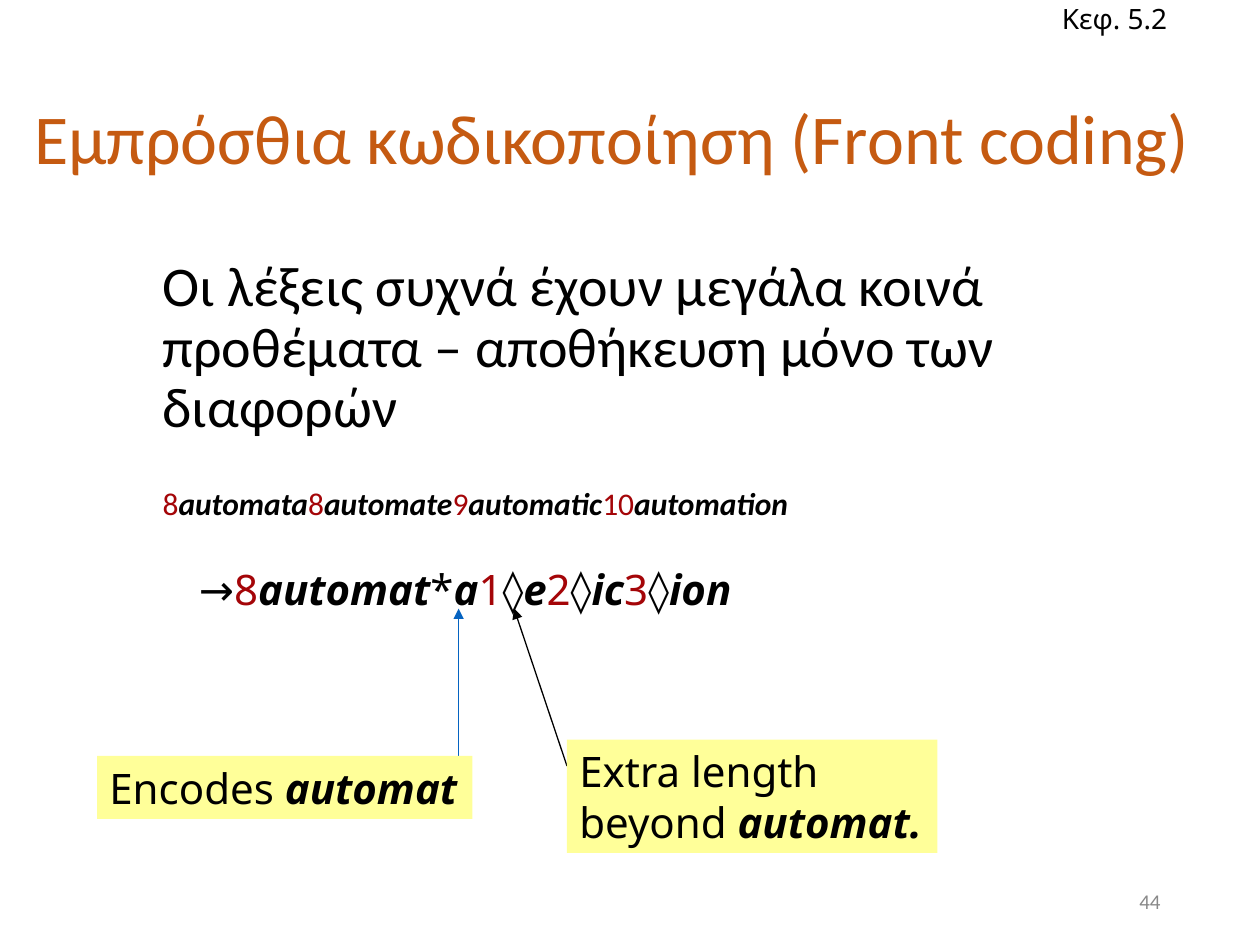
import dataclasses
import typing

import pptx
import pptx.dml.color
import pptx.enum.shapes
import pptx.enum.text
import pptx.oxml
import pptx.oxml.ns
import pptx.util

Inches = pptx.util.Inches
Color = pptx.dml.color.RGBColor
Align = pptx.enum.text.PP_ALIGN
Anchor = pptx.enum.text.MSO_ANCHOR
AutoSize = pptx.enum.text.MSO_AUTO_SIZE


@dataclasses.dataclass(frozen=True)
class Theme:
    heading_font: str = "Calibri"
    example_font: str = "Noto Sans"
    title: Color = Color(0xC5, 0x5A, 0x11)
    ink: Color = Color(0, 0, 0)
    number: Color = Color(0xA4, 0x05, 0x08)
    muted: Color = Color(0x89, 0x89, 0x89)
    note: Color = Color(0xFF, 0xFF, 0x99)
    blue: Color = Color(0x05, 0x63, 0xC1)
    title_size: int = 40
    body_size: int = 32
    example_size: int = 24
    words_size: int = 18
    section_size: int = 16
    page_number_size: int = 12


class Span(typing.NamedTuple):
    text: str
    strong: bool = False
    number: bool = False


class Area(typing.NamedTuple):
    left: float
    top: float
    width: float
    height: float


class Note(typing.NamedTuple):
    area: Area
    lines: list[list[Span]]


class Arrow(typing.NamedTuple):
    start: tuple[float, float]
    end: tuple[float, float]
    color: Color
    width: float


THEME = Theme()


def plain(text: str) -> Span:
    return Span(text)


def term(text: str) -> Span:
    return Span(text, strong=True)


def count(text: str) -> Span:
    return Span(text, number=True)


def write(para, text: str | list[Span], *, size: int, font: str = THEME.example_font,
          color: Color = THEME.ink, align=Align.LEFT) -> None:
    para.alignment = align
    for part in [plain(text)] if isinstance(text, str) else text:
        span = para.add_run()
        span.text = part.text
        span.font.name = font
        span.font.size = pptx.util.Pt(size)
        span.font.bold = span.font.italic = part.strong
        span.font.color.rgb = THEME.number if part.number else color


def place(shape, area: Area) -> None:
    shape.left, shape.top, shape.width, shape.height = map(Inches, area)


def add_label(page, area: Area, text: str | list[Span], *, wrap: bool = False,
              anchor=Anchor.TOP, **style) -> None:
    box = page.shapes.add_textbox(*map(Inches, area))
    frame = box.text_frame
    frame.word_wrap = wrap
    frame.auto_size = AutoSize.NONE if wrap else AutoSize.SHAPE_TO_FIT_TEXT
    frame.vertical_anchor = anchor
    write(frame.paragraphs[0], text, **style)


def add_note(page, note: Note) -> None:
    box = page.shapes.add_shape(pptx.enum.shapes.MSO_SHAPE.RECTANGLE, *map(Inches, note.area))
    box.shadow.inherit = False
    box.fill.solid()
    box.fill.fore_color.rgb = THEME.note
    box.line.fill.background()
    frame = box.text_frame
    frame.word_wrap = False
    frame.auto_size = AutoSize.SHAPE_TO_FIT_TEXT
    frame.vertical_anchor = Anchor.TOP
    for index, line in enumerate(note.lines):
        para = frame.add_paragraph() if index else frame.paragraphs[0]
        write(para, line, size=THEME.example_size)


def add_arrow(page, arrow: Arrow) -> None:
    line = page.shapes.add_connector(pptx.enum.shapes.MSO_CONNECTOR.STRAIGHT,
                                     *map(Inches, arrow.start + arrow.end))
    line.line.color.rgb = arrow.color
    line.line.width = pptx.util.Pt(arrow.width)
    head = pptx.oxml.parse_xml(f'<a:tailEnd {pptx.oxml.ns.nsdecls("a")} type="triangle"/>')
    line.line._get_or_add_ln().append(head)
    effects = pptx.oxml.parse_xml(f'<a:effectLst {pptx.oxml.ns.nsdecls("a")}/>')
    line._element.spPr.append(effects)


def fill_title(page) -> None:
    title = page.shapes.title
    place(title, Area(0.17, 0.4, 9.83, 1.45))
    frame = title.text_frame
    frame.auto_size = AutoSize.NONE
    frame.vertical_anchor = Anchor.MIDDLE
    para = frame.paragraphs[0]
    para.line_spacing = 0.9
    write(para, "Εμπρόσθια κωδικοποίηση (Front coding)", size=THEME.title_size,
          font=THEME.heading_font, color=THEME.title)


def fill_body(page) -> None:
    body = page.placeholders[1]
    place(body, Area(0.69, 2, 8.62, 4.76))
    frame = body.text_frame
    frame.auto_size = AutoSize.NONE
    words = [("8", "automata"), ("8", "automate"), ("9", "automatic"), ("10", "automation")]
    coded = [span for length, word in words for span in (count(length), term(word))]
    intro = "Οι λέξεις συχνά έχουν μεγάλα κοινά προθέματα – αποθήκευση μόνο των διαφορών"
    items = [(intro, THEME.body_size, 3.8), (coded, THEME.words_size, 27.4)]
    for index, (text, size, space) in enumerate(items):
        para = frame.add_paragraph() if index else frame.paragraphs[0]
        para.level = 1
        para.line_spacing = 0.9
        para.space_before = pptx.util.Pt(space)
        write(para, text, size=size, font=THEME.heading_font)
        props = para._p.get_or_add_pPr()
        props.set("marL", str(Inches(0.5)))
        props.set("indent", "0")
        props.append(pptx.oxml.parse_xml(f'<a:buNone {pptx.oxml.ns.nsdecls("a")}/>'))


def main() -> None:
    deck = pptx.Presentation()
    deck.slide_width, deck.slide_height = Inches(10), Inches(7.5)
    page = deck.slides.add_slide(deck.slide_layouts[1])
    fill_title(page)
    fill_body(page)
    add_label(page, Area(7.06, 6.95, 2.25, 0.4), "44", wrap=True, anchor=Anchor.MIDDLE,
              size=THEME.page_number_size, font=THEME.heading_font, color=THEME.muted,
              align=Align.RIGHT)

    front_coded = [plain("→"), count("8"), term("automat"), plain("*"), term("a")]
    for length, ending in [("1", "e"), ("2", "ic"), ("3", "ion")]:
        front_coded += [count(length), plain("◊"), term(ending)]
    add_label(page, Area(1.48, 4.42, 4.73, 0.51), front_coded, size=THEME.example_size)

    prefix_note = Note(Area(0.77, 6, 2.98, 0.5), [[plain("Encodes "), term("automat")]])
    length_note = Note(Area(4.5, 5.87, 2.94, 0.9),
                       [[plain("Extra length")], [plain("beyond "), term("automat.")]])
    callouts = [
        (Arrow((3.64, 6.08), (3.64, 4.83), THEME.blue, 1), prefix_note),
        (Arrow((4.5, 6.08), (4.08, 4.83), THEME.ink, 0.75), length_note),
    ]
    for arrow, note in callouts:
        add_arrow(page, arrow)
        add_note(page, note)

    add_label(page, Area(8.33, -0.04, 1.1, 0.37), "Κεφ. 5.2", anchor=Anchor.MIDDLE,
              size=THEME.section_size)
    deck.save("out.pptx")


if __name__ == "__main__":
    main()
